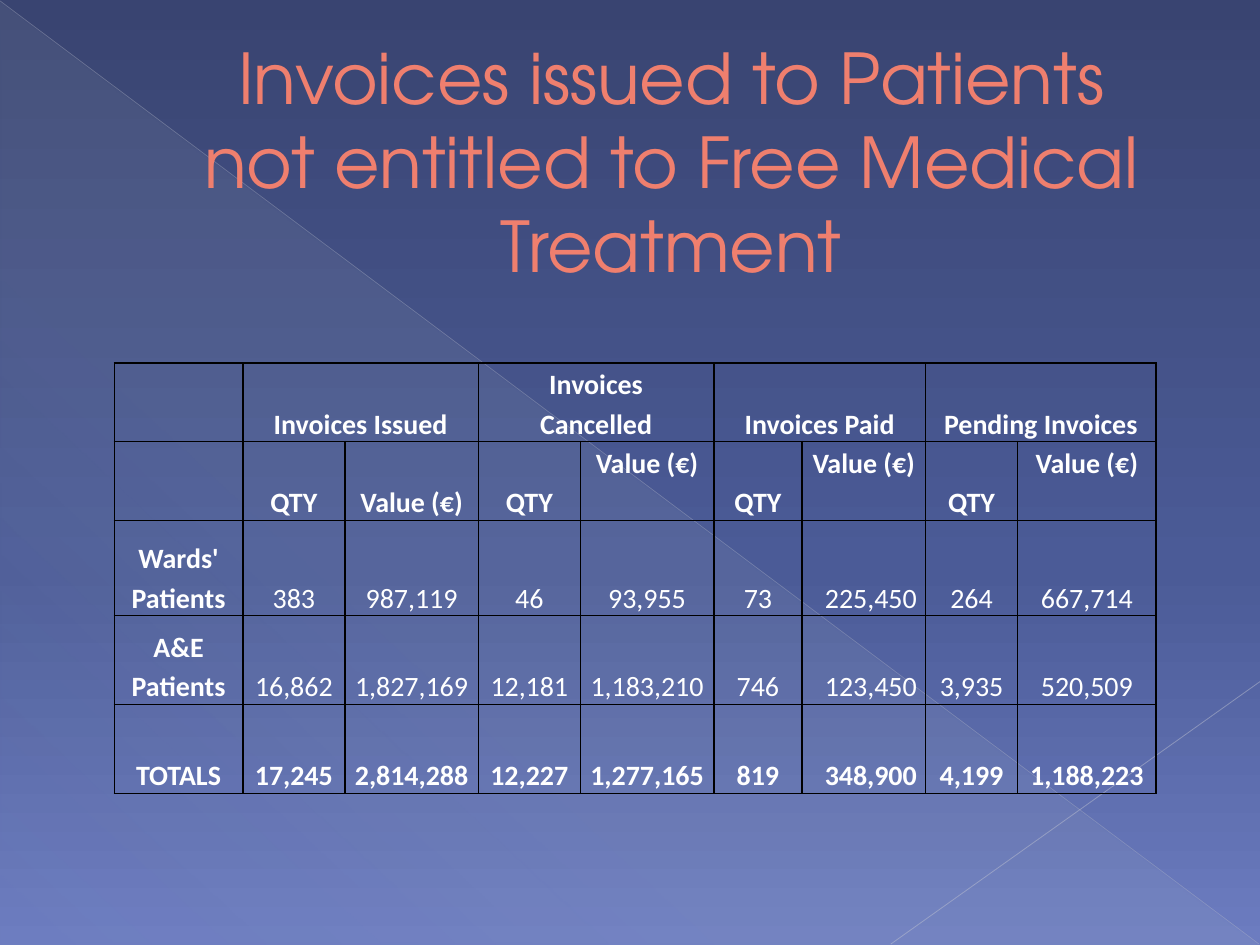
"""Builds the slide on invoices issued to patients not entitled to free treatment."""
from lxml.etree import SubElement
from pptx import Presentation
from pptx.dml.color import RGBColor
from pptx.enum.shapes import MSO_CONNECTOR, MSO_SHAPE
from pptx.enum.text import MSO_ANCHOR, MSO_AUTO_SIZE, PP_ALIGN
from pptx.oxml.ns import qn
from pptx.util import Pt

NIGHT = RGBColor(0x39, 0x44, 0x71)
INDIGO = RGBColor(0x4B, 0x5B, 0x97)
PERIWINKLE = RGBColor(0x6C, 0x7C, 0xC0)
MIST = RGBColor(0xC5, 0xD1, 0xD7)
DIAGONAL = RGBColor(0xBA, 0xBE, 0xCD)
CORNER = RGBColor(0xC2, 0xC5, 0xD2)
CORAL = RGBColor(0xEF, 0x7F, 0x6E)
WHITE = RGBColor(0xFF, 0xFF, 0xFF)
BLACK = RGBColor(0x00, 0x00, 0x00)

GROUPS = ["Invoices Issued", "Invoices\vCancelled", "Invoices Paid", "Pending Invoices"]
ROWS = [
    [""] + [cell for group in GROUPS for cell in (group, "")],
    [""] + ["QTY", "Value (€)"] * len(GROUPS),
    ["Wards' Patients", "383", "987,119", "46", "93,955", "73", "225,450", "264", "667,714"],
    ["A&E Patients", "16,862", "1,827,169", "12,181", "1,183,210", "746", "123,450", "3,935", "520,509"],
    ["TOTALS", "17,245", "2,814,288", "12,227", "1,277,165", "819", "348,900", "4,199", "1,188,223"],
]
COLUMN_WIDTHS = [73.5, 58.3, 76.3, 58.3, 76.3, 50.4, 70.6, 52.6, 79.2]
ROW_HEIGHTS = [45, 45, 54.4, 50.8, 50.8]
PAID_VALUE = 6


class InvoiceSlide:
    """Holds the style and the current slide."""

    title_font = "TeX Gyre Adventor"
    table_font = "Calibri"

    def __init__(self, deck):
        self.slide = deck.slides.add_slide(deck.slide_layouts[5])
        self.shapes = self.slide.shapes

    def gradient(self, fill, owner, stops, angle):
        fill.gradient()
        gradient = owner.find(".//" + qn("a:gradFill"))
        stop_list = gradient.find(qn("a:gsLst"))
        for old_stop in list(stop_list):
            stop_list.remove(old_stop)
        for position, color, opacity in stops:
            stop = SubElement(stop_list, qn("a:gs"), pos=str(position * 1000))
            self.opacity(SubElement(stop, qn("a:srgbClr"), val=str(color)), opacity)
        gradient.find(qn("a:lin")).set("ang", str(angle * 60000))

    def opacity(self, color, percent):
        SubElement(color, qn("a:alpha"), val=str(percent * 1000))

    def background(self, stops, angle):
        self.gradient(self.slide.background.fill, self.slide.element, stops, angle)

    def triangle(self, left, top, width, height, stops, angle):
        triangle = self.shapes.add_shape(
            MSO_SHAPE.RIGHT_TRIANGLE, Pt(left), Pt(top), Pt(width), Pt(height))
        triangle.shadow.inherit = False
        triangle.line.fill.background()
        self.gradient(triangle.fill, triangle.element, stops, angle)

    def line(self, start, end, color, width, opacity):
        line = self.shapes.add_connector(MSO_CONNECTOR.STRAIGHT, *map(Pt, start + end))
        line.line.color.rgb = color
        line.line.width = Pt(width)
        properties = line.element.spPr
        self.opacity(properties.find(".//" + qn("a:srgbClr")), opacity)
        SubElement(properties, qn("a:effectLst"))

    def title(self, text, left, top, width, height):
        title = self.shapes.title
        title.left, title.top, title.width, title.height = map(Pt, (left, top, width, height))
        frame = title.text_frame
        frame.text = text
        frame.word_wrap = True
        frame.auto_size = MSO_AUTO_SIZE.NONE
        frame.vertical_anchor = MSO_ANCHOR.MIDDLE
        frame.margin_left = Pt(45)
        frame.margin_bottom = Pt(22)
        paragraph = frame.paragraphs[0]
        paragraph.alignment = PP_ALIGN.CENTER
        font = paragraph.runs[0].font
        font.name, font.size, font.color.rgb = self.title_font, Pt(40), CORAL
        title.element.getparent().append(title.element)

    def table(self, left, top):
        table = self.shapes.add_table(
            len(ROWS), len(COLUMN_WIDTHS), Pt(left), Pt(top),
            Pt(sum(COLUMN_WIDTHS)), Pt(sum(ROW_HEIGHTS))).table
        table.first_row = table.horz_banding = False
        for column, width in zip(table.columns, COLUMN_WIDTHS):
            column.width = Pt(width)
        for row, height in zip(table.rows, ROW_HEIGHTS):
            row.height = Pt(height)
        for first in range(1, len(COLUMN_WIDTHS), 2):
            table.cell(0, first).merge(table.cell(0, first + 1))
        for r, texts in enumerate(ROWS):
            for c, text in enumerate(texts):
                raised = r == 1 and c > 2 and c % 2 == 0
                self.cell(
                    table.cell(r, c), text,
                    bold=r not in (2, 3) or c == 0,
                    anchor=MSO_ANCHOR.TOP if raised else MSO_ANCHOR.BOTTOM,
                    alignment=PP_ALIGN.RIGHT if r > 1 and c == PAID_VALUE else PP_ALIGN.CENTER)

    def cell(self, cell, text, bold, anchor, alignment):
        cell.margin_left = cell.margin_right = Pt(5)
        cell.margin_top = cell.margin_bottom = 0
        cell.vertical_anchor = anchor
        self.borders(cell)
        cell.fill.background()
        if not text:
            return
        cell.text_frame.text = text
        paragraph = cell.text_frame.paragraphs[0]
        paragraph.alignment = alignment
        paragraph.line_spacing = 1.15
        for run in paragraph.runs:
            font = run.font
            font.name, font.size, font.bold = self.table_font, Pt(16), bold
            font.color.rgb = WHITE

    def borders(self, cell):
        properties = cell._tc.get_or_add_tcPr()
        for side in ("a:lnL", "a:lnR", "a:lnT", "a:lnB"):
            border = SubElement(properties, qn(side), w=str(Pt(1)))
            SubElement(SubElement(border, qn("a:solidFill")), qn("a:srgbClr"), val=str(BLACK))


def main():
    deck = Presentation()
    deck.slide_width, deck.slide_height = Pt(720), Pt(540)
    page = InvoiceSlide(deck)
    page.background([(0, NIGHT, 100), (60, INDIGO, 100), (100, PERIWINKLE, 100)], 90)
    page.triangle(0.5, 1.2, 719, 538.6, [(0, MIST, 10), (70, MIST, 8), (100, MIST, 1)], 133)
    page.line((0, 0.5), (719.5, 539.5), DIAGONAL, 0.39, 35)
    page.line((720, 389.5), (509, 539.5), CORNER, 0.47, 45)
    page.table(65.3, 207.4)
    page.title("Invoices issued to Patients not entitled to Free Medical Treatment",
               70.6, 13.7, 588.2, 174.2)
    deck.save("out.pptx")


if __name__ == "__main__":
    main()
